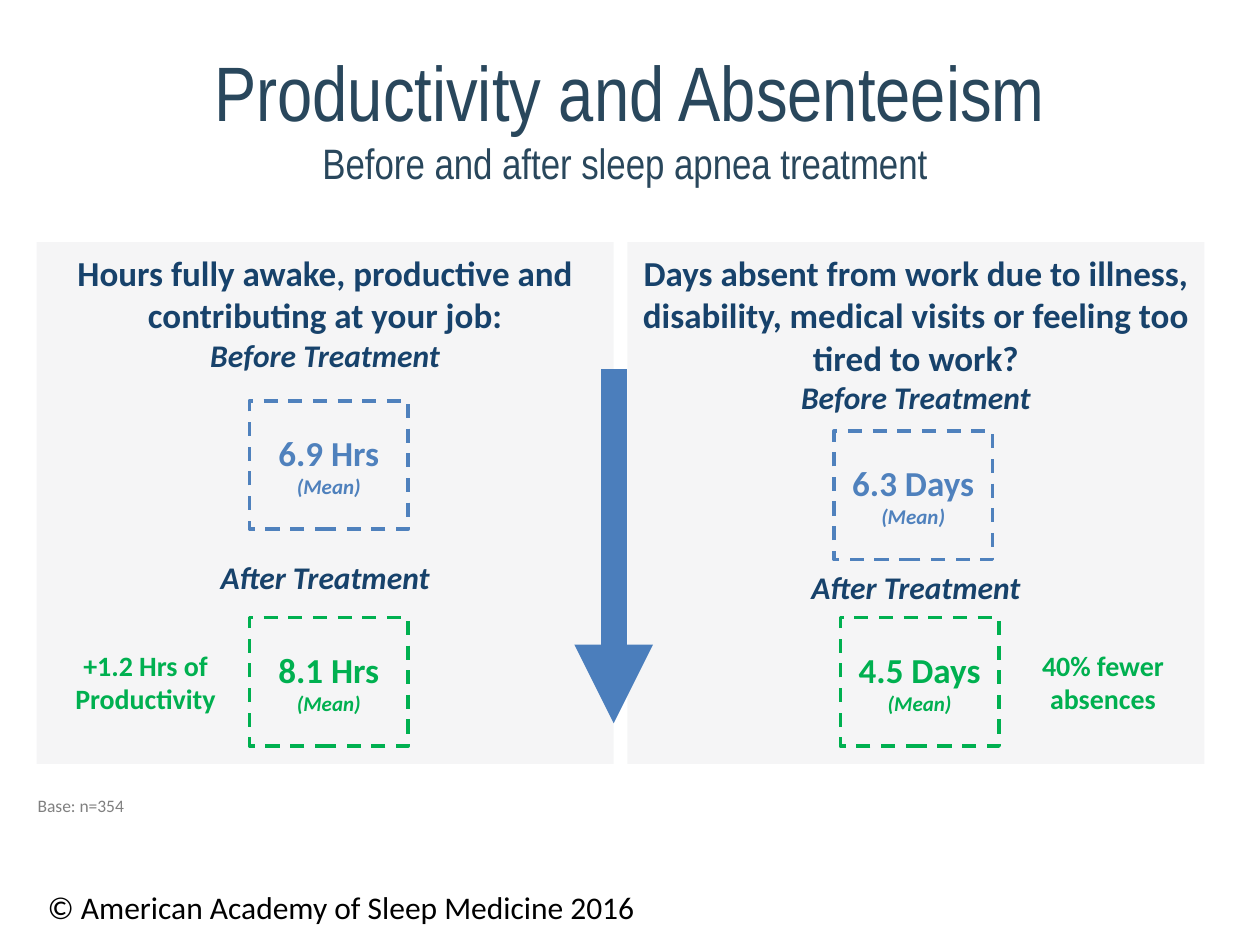
from dataclasses import dataclass

from lxml import etree
from pptx import Presentation
from pptx.dml.color import RGBColor
from pptx.enum.dml import MSO_LINE
from pptx.enum.shapes import MSO_CONNECTOR, MSO_SHAPE
from pptx.enum.text import MSO_ANCHOR, PP_ALIGN
from pptx.oxml.ns import qn
from pptx.util import Cm, Pt

RECTANGLE = MSO_SHAPE.RECTANGLE
STRAIGHT = MSO_CONNECTOR.STRAIGHT
DASH = MSO_LINE.DASH
TOP, MIDDLE = MSO_ANCHOR.TOP, MSO_ANCHOR.MIDDLE
LEFT, CENTER = PP_ALIGN.LEFT, PP_ALIGN.CENTER

COLORS = {
    "panel": "ECEDEF",
    "heading": "17426B",
    "before": "4F81BD",
    "after": "00B050",
    "arrow": "4B7EBC",
    "title": "29475C",
    "base": "808080",
    "copyright": "000000",
}

# Font formats by role
FORMATS = {
    "title": {"name": "Arial Narrow", "size": Pt(44.1)},
    "subtitle": {"name": "Arial Narrow", "size": Pt(24.3)},
    "heading": {"name": "Calibri", "size": Pt(20), "bold": True},
    "stage": {"name": "Calibri", "size": Pt(18), "bold": True, "italic": True},
    "mean": {"name": "Calibri", "size": Pt(12), "bold": True, "italic": True},
    "change": {"name": "Calibri", "size": Pt(16), "bold": True},
    "base": {"name": "Calibri", "size": Pt(10)},
    "copyright": {"name": "Calibri", "size": Pt(18)},
}

# Shared measures in centimetres
PANEL_TOP, PANEL_WIDTH, PANEL_HEIGHT = 4.88, 11.63, 10.52
BOX_WIDTH, BOX_HEIGHT, AFTER_TOP = 3.2, 2.59, 12.45
CHANGE_WIDTH = 3.63


@dataclass
class ValueBox:
    value: str
    left: float
    top: float
    color: str


@dataclass
class Panel:
    heading: str
    left: float
    stage_gap: float  # points between the two stage labels
    boxes: tuple[ValueBox, ValueBox]
    change: str
    change_left: float


PANELS = [
    Panel(
        "Hours fully awake, productive and contributing at your job:", 0.74, 105,
        (ValueBox("6.9 Hrs ", 5.03, 8.08, "before"),
         ValueBox("8.1 Hrs ", 5.03, AFTER_TOP, "after")),
        "+1.2 Hrs of Productivity", 1.12,
    ),
    Panel(
        "Days absent from work due to illness, disability, medical visits "
        "or feeling too tired to work?", 12.65, 87,
        (ValueBox("6.3 Days ", 16.81, 8.69, "before"),
         ValueBox("4.5 Days ", 16.94, AFTER_TOP, "after")),
        "40% fewer absences", 20.42,
    ),
]


def rgb(color: str) -> RGBColor:
    return RGBColor.from_string(COLORS[color])


def add_run(paragraph, text: str, role: str, color: str) -> None:
    run = paragraph.add_run()
    run.text = text
    for attribute, value in FORMATS[role].items():
        setattr(run.font, attribute, value)
    run.font.color.rgb = rgb(color)


def prepare_frame(shape, anchor=TOP, alignment=CENTER, wrap: bool = True):
    """Set up the text frame and return its first paragraph."""
    frame = shape.text_frame
    frame.word_wrap = wrap
    frame.vertical_anchor = anchor
    frame.paragraphs[0].alignment = alignment
    return frame.paragraphs[0]


def add_text(slide, left: float, top: float, width: float, height: float,
             text: str, role: str, color: str, **layout) -> None:
    shape = slide.shapes.add_textbox(Cm(left), Cm(top), Cm(width), Cm(height))
    add_run(prepare_frame(shape, **layout), text, role, color)


def add_rectangle(slide, left: float, top: float, width: float, height: float):
    shape = slide.shapes.add_shape(
        RECTANGLE, Cm(left), Cm(top), Cm(width), Cm(height))
    shape.shadow.inherit = False
    return shape


def add_panel(slide, panel: Panel) -> None:
    shape = add_rectangle(slide, panel.left, PANEL_TOP, PANEL_WIDTH, PANEL_HEIGHT)
    shape.fill.solid()
    shape.fill.fore_color.rgb = rgb("panel")
    shape.line.fill.background()
    # Half-transparent fill
    fill_color = shape.fill._xPr.find(qn("a:solidFill"))[0]
    etree.SubElement(fill_color, qn("a:alpha"), val="50000")

    paragraph = prepare_frame(shape)
    shape.text_frame.margin_top = Cm(0.2)
    add_run(paragraph, panel.heading, "heading", "heading")
    for stage, gap in (("Before Treatment", 0), ("After Treatment", panel.stage_gap)):
        paragraph = shape.text_frame.add_paragraph()
        paragraph.alignment = CENTER
        paragraph.space_before = Pt(gap)
        add_run(paragraph, stage, "stage", "heading")


def add_value_box(slide, box: ValueBox) -> None:
    shape = add_rectangle(slide, box.left, box.top, BOX_WIDTH, BOX_HEIGHT)
    shape.fill.background()
    shape.line.color.rgb = rgb(box.color)
    shape.line.width = Pt(2)
    shape.line.dash_style = DASH
    paragraph = prepare_frame(shape, anchor=MIDDLE)
    add_run(paragraph, box.value, "heading", box.color)
    add_run(paragraph, "(Mean)", "mean", box.color)


def add_arrow(slide, x: float, top: float, bottom: float) -> None:
    arrow = slide.shapes.add_connector(STRAIGHT, Cm(x), Cm(top), Cm(x), Cm(bottom))
    arrow.line.color.rgb = rgb("arrow")
    arrow.line.width = Pt(15)
    etree.SubElement(arrow.line._get_or_add_ln(), qn("a:tailEnd"), type="triangle")
    etree.SubElement(arrow._element.spPr, qn("a:effectLst"))


def add_title(slide) -> None:
    shape = slide.shapes.add_textbox(Cm(1.27), Cm(0.76), Cm(22.86), Cm(3.18))
    paragraph = prepare_frame(shape, anchor=MIDDLE)
    add_run(paragraph, "Productivity and Absenteeism", "title", "title")
    paragraph.add_line_break()
    add_run(paragraph, "Before and after sleep apnea treatment ", "subtitle", "title")


def main() -> None:
    presentation = Presentation()
    presentation.slide_width, presentation.slide_height = Cm(25.4), Cm(19.05)
    slide = presentation.slides.add_slide(presentation.slide_layouts[6])

    # Title and sample base
    add_title(slide)
    add_text(slide, 0.51, 15.9, 24.36, 0.66, "Base: n=354", "base", "base",
             alignment=LEFT)

    # Panels lie behind the arrow and the values
    for panel in PANELS:
        add_panel(slide, panel)
    add_arrow(slide, 12.37, 7.44, 14.58)
    for panel in PANELS:
        for box in panel.boxes:
            add_value_box(slide, box)
        add_text(slide, panel.change_left, AFTER_TOP, CHANGE_WIDTH, BOX_HEIGHT,
                 panel.change, "change", "after", anchor=MIDDLE)

    # Copyright line
    add_text(slide, 0.71, 17.78, 12.5, 1.02,
             "© American Academy of Sleep Medicine 2016",
             "copyright", "copyright", alignment=LEFT, wrap=False)

    presentation.save("out.pptx")


if __name__ == "__main__":
    main()
